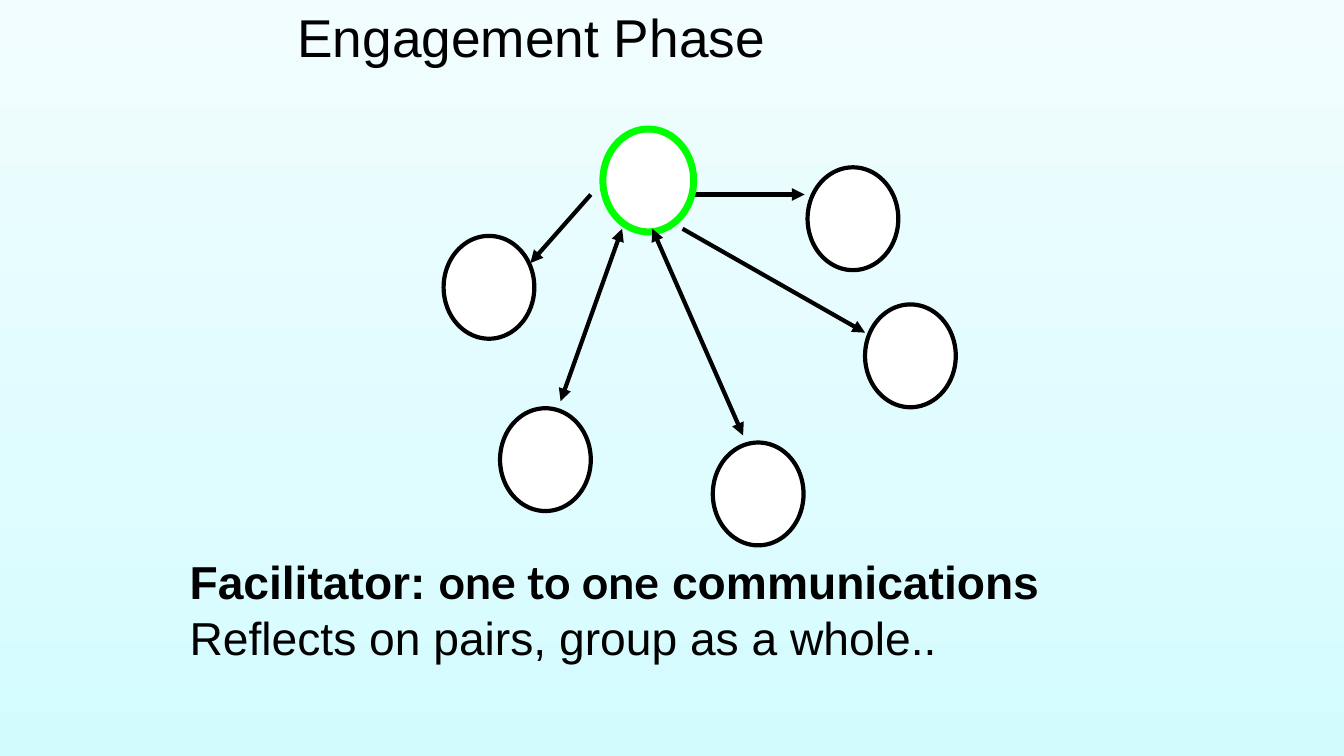
"""Build the Engagement Phase slide: a facilitator linked to five members."""
from lxml.etree import SubElement
from pptx import Presentation
from pptx.dml.color import RGBColor
from pptx.enum.shapes import MSO_CONNECTOR as CONN, MSO_SHAPE as SHAPE
from pptx.enum.text import MSO_ANCHOR, MSO_AUTO_SIZE, PP_ALIGN
from pptx.oxml.ns import qn
from pptx.util import Inches, Pt

BLACK = RGBColor(0x00, 0x00, 0x00)
WHITE = RGBColor(0xFF, 0xFF, 0xFF)
GREEN = RGBColor(0x00, 0xFF, 0x00)
SKY = [
    (0, RGBColor(0xD2, 0xFB, 0xFE)),
    (35, RGBColor(0xDF, 0xFC, 0xFF)),
    (100, RGBColor(0xF1, 0xFD, 0xFE)),
]


def place(sp, left, top, width, height, indent):
    sp.left, sp.top = Inches(left), Inches(top)
    sp.width, sp.height = Inches(width), Inches(height)
    tf = sp.text_frame
    tf.margin_top = tf.margin_right = tf.margin_bottom = 0
    tf.margin_left = Inches(indent)
    tf.word_wrap = True
    tf.auto_size = MSO_AUTO_SIZE.NONE
    tf.vertical_anchor = MSO_ANCHOR.TOP
    return tf


def style(p, size):
    p.alignment = PP_ALIGN.LEFT
    p.space_before = Pt(0)
    p.font.size = Pt(size)
    p.font.color.rgb = BLACK


prs = Presentation()
prs.slide_width, prs.slide_height = Inches(13.33), Inches(7.5)
s = prs.slides.add_slide(prs.slide_layouts[1])

fill = s.background.fill
fill.gradient()
fill.gradient_angle = 90
stops = next(s.background._cSld.iter(qn("a:gsLst")))
for stop in list(stops):
    stops.remove(stop)
for pos, color in SKY:
    stop = SubElement(stops, qn("a:gs"), pos=str(pos * 1000))
    SubElement(stop, qn("a:srgbClr"), val=str(color))

tf = place(s.shapes.title, 2.76, 0.04, 7.59, 0.64, 0.19)
tf.text = "Engagement Phase"
style(tf.paragraphs[0], 38)
tf.paragraphs[0].font.name = "Arial"

tf = place(s.placeholders[1], 1.84, 5.49, 9.28, 1.13, 0.04)
lines = [
    [("Facilitator: ", "Arial"), ("one to one", "Lato"), (" communications", "Arial")],
    [("Reflects on pairs, group as a whole..", "Arial")],
]
for i, runs in enumerate(lines):
    p = tf.paragraphs[0] if i == 0 else tf.add_paragraph()
    style(p, 33)
    p.font.bold = i == 0
    pPr = p._p.get_or_add_pPr()
    pPr.set("marL", "0")
    pPr.set("indent", "0")
    bullet = pPr.makeelement(qn("a:buNone"), {})
    pPr.insert_element_before(bullet, "a:tabLst", "a:defRPr", "a:extLst")
    for text, font in runs:
        r = p.add_run()
        r.text = text
        r.font.name = font

circles = [
    (5.98, 1.28, GREEN, 5),
    (4.4, 2.34, BLACK, 3),
    (4.96, 4.05, BLACK, 3),
    (8.01, 1.66, BLACK, 3),
    (7.07, 4.39, BLACK, 3),
    (8.58, 3.02, BLACK, 3),
]
for left, top, color, weight in circles:
    sp = s.shapes.add_shape(SHAPE.OVAL, Inches(left), Inches(top), Inches(0.9), Inches(1.02))
    sp.shadow.inherit = False
    sp.fill.solid()
    sp.fill.fore_color.rgb = WHITE
    sp.line.color.rgb = color
    sp.line.width = Pt(weight)

arrows = [
    (5.86, 1.93, 5.26, 2.61, False),
    (6.77, 1.93, 7.98, 1.93, False),
    (6.47, 2.27, 7.37, 4.32, True),
    (6.17, 2.27, 5.56, 3.98, True),
    (6.77, 2.27, 8.58, 3.3, False),
]
for x1, y1, x2, y2, two_way in arrows:
    link = s.shapes.add_connector(CONN.STRAIGHT, Inches(x1), Inches(y1), Inches(x2), Inches(y2))
    link.line.color.rgb = BLACK
    link.line.width = Pt(3)
    ln = link.line._get_or_add_ln()
    if two_way:
        SubElement(ln, qn("a:headEnd"), type="triangle")
    SubElement(ln, qn("a:tailEnd"), type="triangle")
    SubElement(link._element.spPr, qn("a:effectLst"))
    if (x1, y1) == (6.77, 1.93):
        s.shapes._spTree.remove(link._element)
        s.shapes._spTree.insert(4, link._element)

prs.save("out.pptx")
